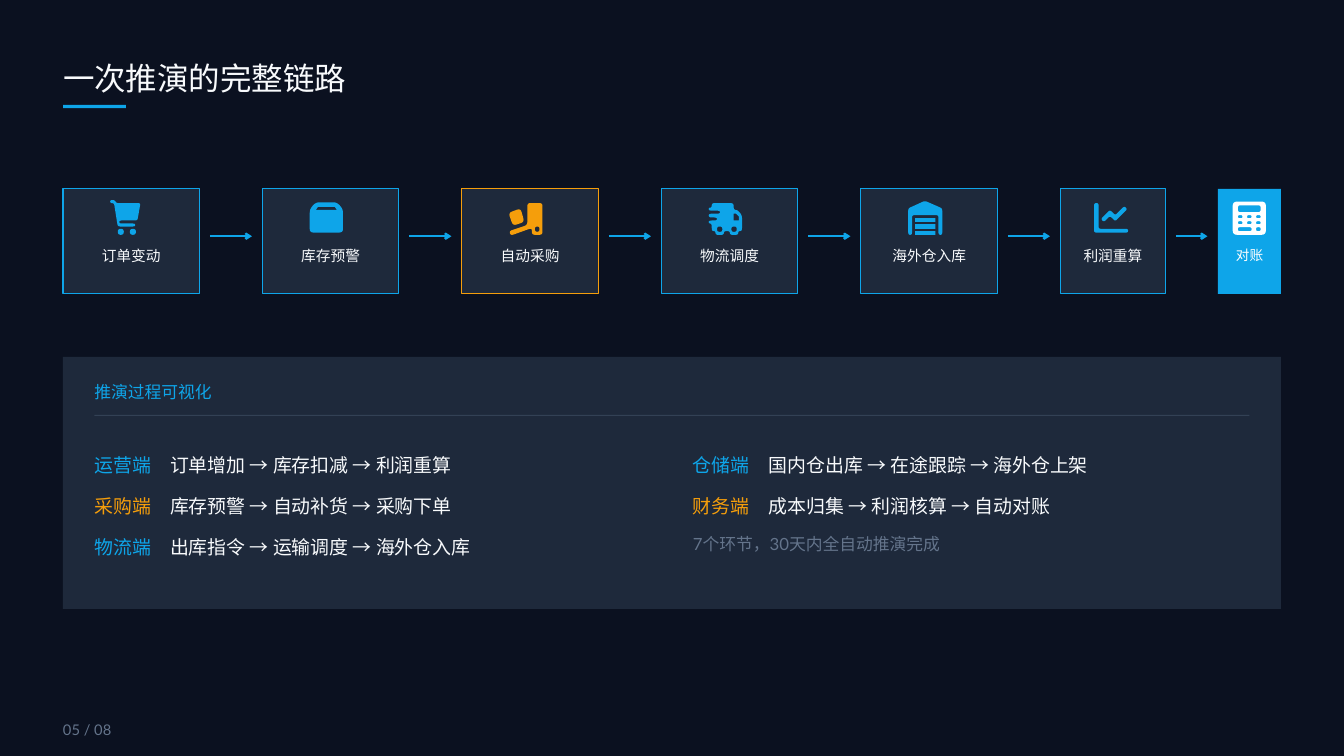
from dataclasses import dataclass
from itertools import pairwise
from math import dist

from lxml.etree import SubElement
from pptx import Presentation
from pptx.dml.color import RGBColor
from pptx.enum.shapes import MSO_CONNECTOR as Link, MSO_SHAPE as Preset
from pptx.enum.text import PP_ALIGN as Align
from pptx.oxml.ns import qn
from pptx.util import Pt

PX = 12700
ICON_UNIT = 9144


@dataclass(frozen=True)
class Theme:
    font: str = "Lato"
    night: str = "0B1120"
    card: str = "1E293B"
    divider: str = "334155"
    blue: str = "0EA5E9"
    amber: str = "F59E0B"
    text: str = "F8FAFC"
    white: str = "FFFFFF"
    muted: str = "64748B"
    title: int = 30
    body: int = 18
    heading: int = 16
    label: int = 14
    small: int = 13


def assign(target, formats):
    for attribute, value in formats.items():
        setattr(target, attribute, value)


def box(x, y, width, height, radius=0):
    right, bottom = x + width, y + height
    return radius, [(x, y), (right, y), (right, bottom), (x, bottom)]


def rounded(radius, corners):
    if not radius:
        return corners
    outline = []
    for i, corner in enumerate(corners):
        ends = []
        for neighbour in (corners[i - 1], corners[(i + 1) % len(corners)]):
            share = min(radius / dist(corner, neighbour), 0.5)
            ends.append([c + (n - c) * share for c, n in zip(corner, neighbour)])
        for t in (0, 0.25, 0.5, 0.75, 1):
            outline.append(tuple(
                (1 - t) ** 2 * a + 2 * t * (1 - t) * c + t * t * b
                for a, c, b in zip(ends[0], corner, ends[1])))
    return outline


CART = [
    (3, [(0, -2), (6, -2), (8, 2), (40, 2), (36, 25), (12, 25), (12, 29),
         (33, 29), (33, 33), (10, 33), (5, 2), (0, 2)]),
    box(10, 36, 8, 8, 4), box(26, 36, 8, 8, 4),
]
PARCEL = [
    (5, [(0, 10), (8, 1), (36, 1), (44, 10), (44, 41), (0, 41)]),
    (0, [(36, 11), (33, 7), (11, 7), (8, 11)]),
]
LOADING = [
    (4, [(24, 2), (44, 2), (44, 44), (30, 44), (30, 36), (27, 36),
         (2, 45), (0, 39), (24, 31)]),
    box(34, 33, 6, 7, 3),
    (5, [(-1, 15), (15, 9), (20, 27), (5, 32)]),
]
TRUCK = [
    (4, [(4, 2), (33, 2), (33, 11), (38, 11), (44, 18), (44, 39), (39, 39),
         (39, 44), (28, 44), (28, 39), (20, 39), (20, 44), (9, 44), (9, 39),
         (4, 39), (4, 29), (0, 29), (0, 25), (11, 25), (11, 21), (0, 21),
         (0, 16), (15, 16), (15, 12), (0, 12), (0, 8), (4, 8)]),
    box(11, 33, 7, 7, 3), box(30, 33, 7, 7, 3),
    (0, [(40, 25), (40, 20), (36, 16), (33, 16), (33, 25)]),
]
WAREHOUSE = [
    (3, [(0, 9), (22, -1), (45, 9), (45, 44), (40, 44), (40, 18),
         (5, 18), (5, 44), (0, 44)]),
    box(9, 22, 27, 5), box(9, 30, 27, 6), box(9, 39, 27, 5),
]
TREND = [
    (3, [(0, 2), (6, 2), (6, 36), (45, 36), (45, 41), (0, 41)]),
    (3, [(40, 6), (28, 18), (21, 11), (9, 23), (13, 27), (21, 19),
         (28, 26), (44, 10)]),
]
CALCULATOR = [
    box(0, 0, 44, 44, 6), box(7, 5, 30, 9, 3),
    *[box(x, y, 6, 4, 2) for y in (18, 26) for x in (7, 19, 31)],
    box(7, 34, 18, 5, 2), box(31, 34, 6, 5, 2),
]


class Deck:
    def __init__(self, theme, width, height):
        self.theme = theme
        self.file = Presentation()
        assign(self.file, {"slide_width": width * PX, "slide_height": height * PX})
        self.slide = self.file.slides.add_slide(self.file.slide_layouts[6])
        self.paint(self.slide.background.fill, theme.night)
        self.shapes = self.slide.shapes

    def paint(self, fill, color):
        fill.solid()
        fill.fore_color.rgb = RGBColor.from_string(color)

    def finish(self, shape, color, border=None):
        shape.shadow.inherit = False
        self.paint(shape.fill, color)
        if border:
            self.paint(shape.line.fill, border)
            shape.line.width = Pt(1)
        else:
            shape.line.fill.background()

    def panel(self, x, y, width, height, color, border=None):
        frame = (n * PX for n in (x, y, width, height))
        self.finish(self.shapes.add_shape(Preset.RECTANGLE, *frame), color, border)

    def icon(self, x, y, contours, color):
        outlines = [[(round(x * PX + px * ICON_UNIT), round(y * PX + py * ICON_UNIT))
                     for px, py in rounded(radius, corners)]
                    for radius, corners in contours]
        builder = self.shapes.build_freeform(*outlines[0][0], scale=1.0)
        for i, (start, *rest) in enumerate(outlines):
            if i:
                builder.move_to(*start)
            builder.add_line_segments(rest, close=True)
        self.finish(builder.convert_to_shape(), color)

    def arrow(self, start, end, y, color):
        link = self.shapes.add_connector(
            Link.STRAIGHT, start * PX, y * PX, end * PX, y * PX)
        self.paint(link.line.fill, color)
        link.line.width = Pt(2)
        SubElement(link.line._get_or_add_ln(), qn("a:tailEnd"), type="arrow")
        SubElement(link._element.spPr, qn("a:effectLst"))

    def text(self, x, y, width, height, lines, spacing, align=Align.LEFT, wrap=False):
        frame = self.shapes.add_textbox(
            *(n * PX for n in (x, y, width, height))).text_frame
        margins = ("margin_left", "margin_top", "margin_right", "margin_bottom")
        assign(frame, dict.fromkeys(margins, 0) | {"word_wrap": wrap})
        for i, line in enumerate(lines):
            paragraph = frame.add_paragraph() if i else frame.paragraphs[0]
            assign(paragraph, {"line_spacing": spacing, "alignment": align})
            for words, size, color in line:
                run = paragraph.add_run()
                run.text = words
                assign(run.font, {"name": self.theme.font, "size": Pt(size)})
                run.font.color.rgb = RGBColor.from_string(color)


def main():
    look = Theme()
    deck = Deck(look, 1280, 720)
    deck.text(60, 45, 600, 48, [[("一次推演的完整链路", look.title, look.text)]], 1.3)
    deck.panel(60, 100, 60, 3, look.blue)

    steps = [
        ("订单变动", 60, 130, 45, CART, look.blue),
        ("库存预警", 250, 130, 45, PARCEL, look.blue),
        ("自动采购", 440, 130, 45, LOADING, look.amber),
        ("物流调度", 630, 130, 45, TRUCK, look.blue),
        ("海外仓入库", 820, 130, 45, WAREHOUSE, look.blue),
        ("利润重算", 1010, 100, 32, TREND, look.blue),
        ("对账", 1160, 60, 14, CALCULATOR, look.white),
    ]
    for name, left, width, inset, contours, accent in steps:
        final = accent == look.white
        fill, border = (look.blue, None) if final else (look.card, accent)
        size, ink = (look.small, look.white) if final else (look.label, look.text)
        deck.panel(left, 180, width, 100, fill, border)
        deck.icon(left + inset, 192, contours, accent)
        deck.text(left, 232, width, 40, [[(name, size, ink)]], 1.2, Align.CENTER)
    for (_, left, width, *_), (_, following, *_) in pairwise(steps):
        deck.arrow(left + width + 10, following - 10, 225, look.blue)

    deck.panel(60, 340, 1160, 240, look.card)
    deck.text(90, 360, 300, 30, [[("推演过程可视化", look.heading, look.blue)]], 1.2)
    deck.panel(90, 395, 1100, 1, look.divider)

    def flow(role, stages, color):
        return [(role, look.body, color),
                ("　" + " → ".join(stages), look.body, look.text)]

    front = [
        flow("运营端", ["订单增加", "库存扣减", "利润重算"], look.blue),
        flow("采购端", ["库存预警", "自动补货", "采购下单"], look.amber),
        flow("物流端", ["出库指令", "运输调度", "海外仓入库"], look.blue),
    ]
    back = [
        flow("仓储端", ["国内仓出库", "在途跟踪", "海外仓上架"], look.blue),
        flow("财务端", ["成本归集", "利润核算", "自动对账"], look.amber),
        [("7个环节，30天内全自动推演完成", look.heading, look.muted)],
    ]
    for left, flows in ((90, front), (660, back)):
        deck.text(left, 415, 520, 140, flows, 1.8, wrap=True)

    deck.text(60, 680, 80, 26, [[("05 / 08", look.label, look.muted)]], 1.4)
    deck.file.save("out.pptx")


if __name__ == "__main__":
    main()
